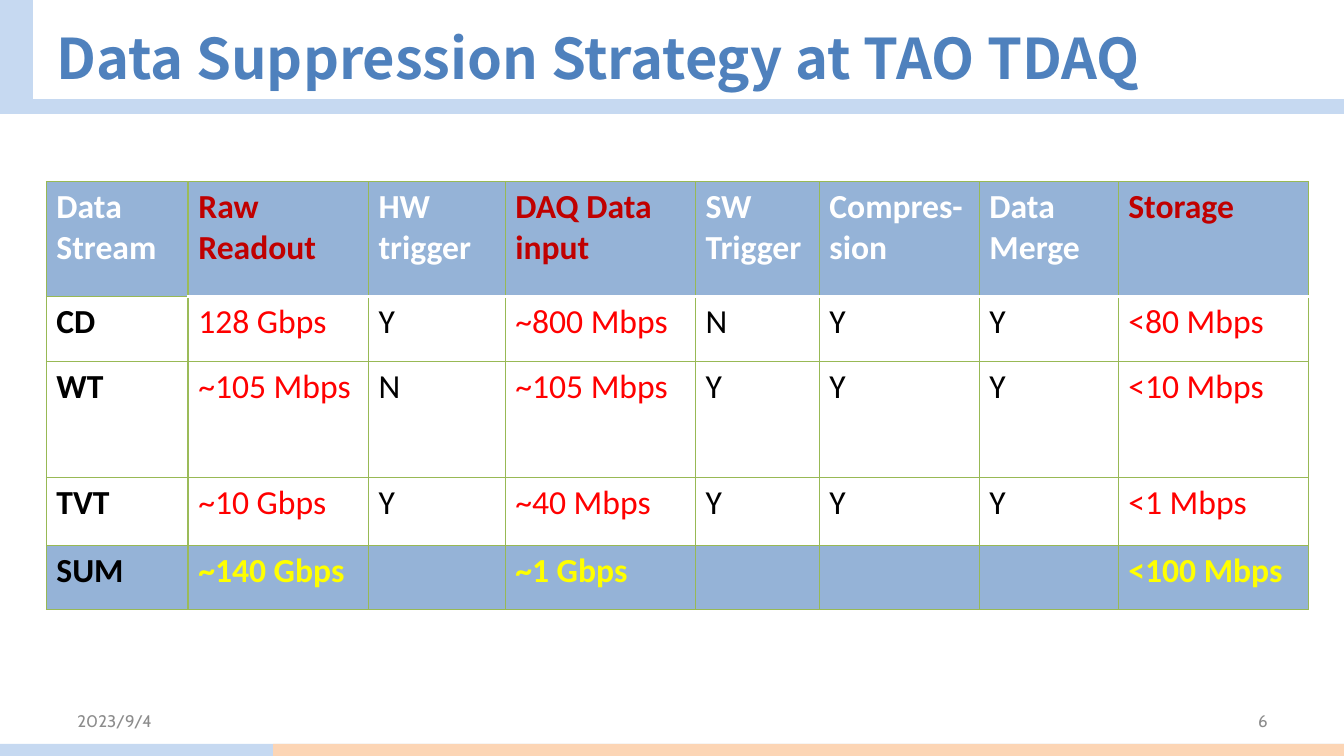
from lxml import etree
from pptx import Presentation
from pptx.dml.color import RGBColor
from pptx.enum.shapes import MSO_SHAPE
from pptx.enum.text import MSO_ANCHOR, PP_ALIGN
from pptx.oxml.ns import qn
from pptx.util import Inches, Pt

RECT = MSO_SHAPE.RECTANGLE
MIDDLE = MSO_ANCHOR.MIDDLE
LEFT, RIGHT = PP_ALIGN.LEFT, PP_ALIGN.RIGHT

PALE_BLUE, PEACH, TITLE_BLUE = "C6D9F1", "FCD5B5", "4F81BD"
BAND, WHITE, BLACK, GREY = "95B3D7", "FFFFFF", "000000", "8C8C8C"
DARK_RED, RED, YELLOW = "C00000", "FF0000", "FFFF00"
GRID, ACCENT = ("98B955", 0.75), ("9BBB59", 2)
HEADER_RULE = (WHITE, 2)

COL_WIDTHS = [1.41, 1.79, 1.36, 1.89, 1.23, 1.59, 1.38, 1.89]
ROW_HEIGHTS = [1.14, 0.64, 1.15, 0.67, 0.64]
RATE_COLS = (1, 3, 7)
ROWS = [
    ["Data\nStream", "Raw Readout", "HW trigger", "DAQ Data input",
     "SW Trigger", "Compres-sion", "Data Merge", "Storage"],
    ["CD", "128 Gbps", "Y", "~800 Mbps", "N", "Y", "Y", "<80 Mbps"],
    ["WT", "~105 Mbps", "N", "~105 Mbps", "Y", "Y", "Y", "<10 Mbps"],
    ["TVT", "~10 Gbps", "Y", "~40 Mbps", "Y", "Y", "Y", "<1 Mbps"],
    ["SUM", "~140 Gbps", "", "~1 Gbps", "", "", "", "<100 Mbps"],
]
LAST = len(ROWS) - 1


def rgb(color):
    return RGBColor.from_string(color)


def style(p, size, name, color, bold=False, align=LEFT):
    p.alignment = align
    p.font.size = Pt(size)
    p.font.name = name
    p.font.bold = bold
    p.font.color.rgb = rgb(color)


def add_bar(s, x, y, w, h, color, outlined=False):
    bar = s.shapes.add_shape(RECT, Inches(x), Inches(y), Inches(w), Inches(h))
    bar.shadow.inherit = False
    bar.fill.solid()
    bar.fill.fore_color.rgb = rgb(color)
    if outlined:
        bar.line.color.rgb = rgb(color)
        bar.line.width = Pt(2)
    else:
        bar.line.fill.background()


def add_frame(s, w, h):
    """Draw the bars behind the title and along the foot of a w by h slide."""
    add_bar(s, 0, h - 0.12, w, 0.12, PALE_BLUE)
    add_bar(s, 2.71, h - 0.12, w - 2.71, 0.12, PEACH)
    add_bar(s, 0, 1, w, 0.12, PALE_BLUE, outlined=True)
    add_bar(s, 0, 0, 0.31, 1, PALE_BLUE, outlined=True)


def set_title(s, text, x, y, w, h):
    title = s.shapes.title
    title.left, title.top = Inches(x), Inches(y)
    title.width, title.height = Inches(w), Inches(h)
    tf = title.text_frame
    tf.text = text
    tf.vertical_anchor = MIDDLE
    style(tf.paragraphs[0], 40, "Noto Sans CJK SC", TITLE_BLUE, bold=True)


def set_borders(cell, borders):
    """Add cell borders from (colour, points) pairs: left, right, top, bottom."""
    tc_pr = cell._tc.get_or_add_tcPr()
    for side, (color, width) in zip("LRTB", borders):
        ln = etree.SubElement(tc_pr, qn(f"a:ln{side}"), w=str(Pt(width)))
        fill = etree.SubElement(ln, qn("a:solidFill"))
        etree.SubElement(fill, qn("a:srgbClr"), val=color)


def cell_borders(row, col):
    left = ACCENT if col == 1 else GRID
    right = ACCENT if col == 0 else GRID
    top = HEADER_RULE if row == 1 and col else GRID
    bottom = HEADER_RULE if row == 0 and col else GRID
    return left, right, top, bottom


def text_color(row, col):
    if col in RATE_COLS:
        return {0: DARK_RED, LAST: YELLOW}.get(row, RED)
    return WHITE if row == 0 else BLACK


def add_stream_table(s, x, y, w, h):
    """Add the data stream table, its columns and rows scaled to the box."""
    table = s.shapes.add_table(len(ROWS), len(COL_WIDTHS), Inches(x), Inches(y),
                               Inches(w), Inches(h)).table
    for column, width in zip(table.columns, COL_WIDTHS):
        column.width = Inches(w * width / sum(COL_WIDTHS))
    for row, height in zip(table.rows, ROW_HEIGHTS):
        row.height = Inches(h * height / sum(ROW_HEIGHTS))
    for i, texts in enumerate(ROWS):
        for j, text in enumerate(texts):
            cell = table.cell(i, j)
            set_borders(cell, cell_borders(i, j))
            cell.fill.solid()
            cell.fill.fore_color.rgb = rgb(BAND if i in (0, LAST) else WHITE)
            cell.text = text
            for p in cell.text_frame.paragraphs:
                style(p, 24, "Calibri", text_color(i, j),
                      bold=i in (0, LAST) or j == 0)


def add_footer(s, text, x, y, w, h, align):
    tf = s.shapes.add_textbox(Inches(x), Inches(y), Inches(w), Inches(h)).text_frame
    tf.word_wrap = True
    tf.vertical_anchor = MIDDLE
    tf.text = text
    style(tf.paragraphs[0], 12, "Cabin", GREY, align=align)


def main():
    prs = Presentation()
    prs.slide_width, prs.slide_height = Inches(13.33), Inches(7.5)
    s = prs.slides.add_slide(prs.slide_layouts[5])
    add_frame(s, 13.33, 7.5)
    set_title(s, "Data Suppression Strategy at TAO TDAQ", 0.46, 0.17, 12.52, 0.79)
    add_stream_table(s, 0.46, 1.8, 12.52, 4.25)
    add_footer(s, "6", 9.56, 6.95, 3.11, 0.4, RIGHT)
    add_footer(s, "2023/9/4", 0.67, 6.95, 3.11, 0.4, LEFT)
    prs.save("out.pptx")


if __name__ == "__main__":
    main()
